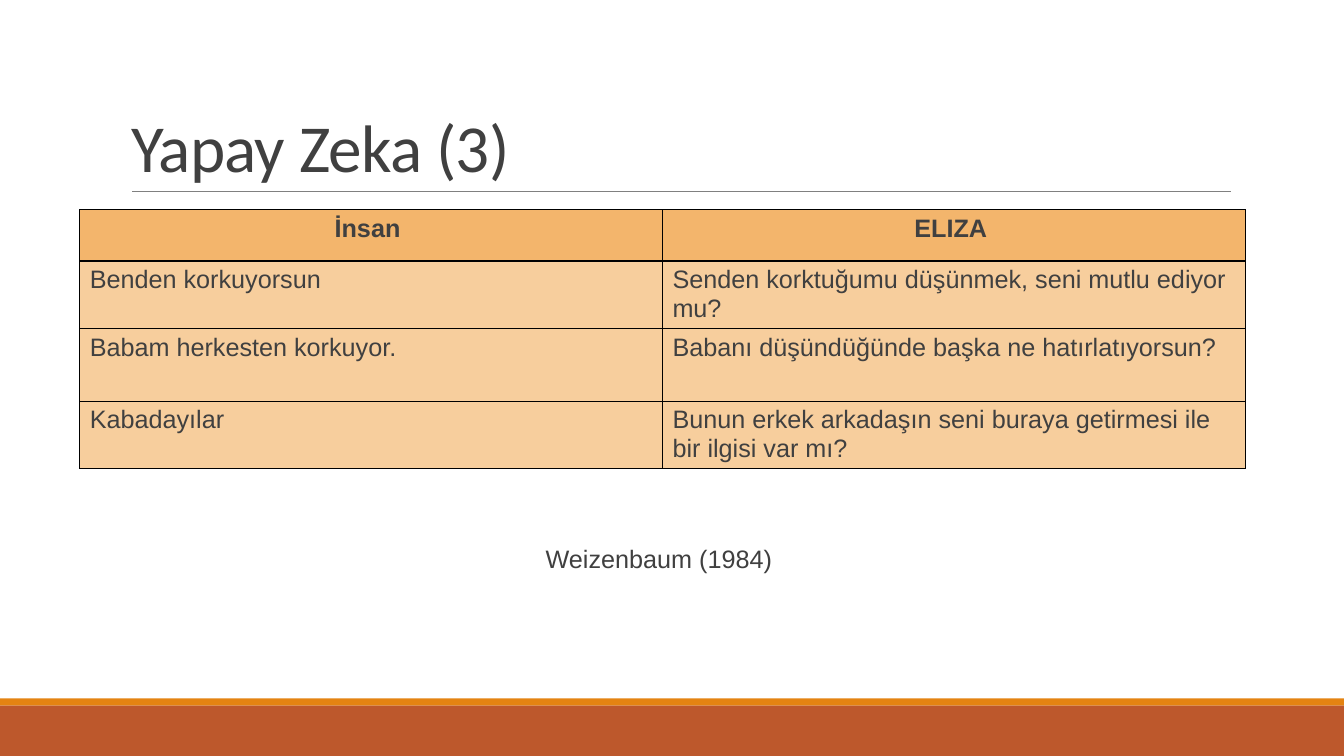
from pptx import Presentation
from pptx.dml.color import RGBColor
from pptx.enum.shapes import MSO_CONNECTOR, MSO_SHAPE
from pptx.enum.text import MSO_ANCHOR, MSO_AUTO_SIZE, PP_ALIGN
from pptx.oxml import parse_xml
from pptx.oxml.ns import nsdecls, qn
from pptx.util import Inches, Pt
from lxml.etree import SubElement

INK = RGBColor(0x40, 0x40, 0x40)
RULE_GREY = RGBColor(0x80, 0x80, 0x80)
RUST = RGBColor(0xBD, 0x58, 0x2C)
ORANGE = RGBColor(0xE4, 0x83, 0x12)
HEADER_FILL = RGBColor(0xF3, 0xB5, 0x6C)
BODY_FILL = RGBColor(0xF7, 0xCE, 0x9D)
BORDER = RGBColor(0, 0, 0)

DIALOGUE = [
    ("İnsan ", "ELIZA "),
    ("Benden korkuyorsun", "Senden korktuğumu düşünmek, seni mutlu ediyor mu?"),
    ("Babam herkesten korkuyor.", "Babanı düşündüğünde başka ne hatırlatıyorsun?"),
    ("Kabadayılar", "Bunun erkek arkadaşın seni buraya getirmesi ile bir ilgisi var mı?"),
]
ROW_HEIGHTS = [0.51, 0.67, 0.72, 0.67]


def format_text(frame, font_name, size, align, bold=False):
    paragraph = frame.paragraphs[0]
    paragraph.alignment = align
    font = paragraph.runs[0].font
    font.name = font_name
    font.size = Pt(size)
    font.bold = bold
    font.color.rgb = INK


def add_footer(slide, left, top, width, height):
    stripe = 0.07
    bands = [(top, stripe, ORANGE), (top + stripe, height - stripe, RUST)]
    for band_top, band_height, color in bands:
        band = slide.shapes.add_shape(
            MSO_SHAPE.RECTANGLE, Inches(left), Inches(band_top), Inches(width), Inches(band_height)
        )
        band.shadow.inherit = False
        band.fill.solid()
        band.fill.fore_color.rgb = color
        band.line.fill.background()


def add_title(slide, left, top, width, height):
    title = slide.shapes.title
    title.left, title.top = Inches(left), Inches(top)
    title.width, title.height = Inches(width), Inches(height)
    frame = title.text_frame
    frame.text = "Yapay Zeka (3)"
    frame.auto_size = MSO_AUTO_SIZE.NONE
    frame.vertical_anchor = MSO_ANCHOR.BOTTOM
    format_text(frame, "Calibri", 48, PP_ALIGN.LEFT)
    heading = frame.paragraphs[0]
    heading.line_spacing = 0.85
    heading.runs[0].font._element.set("spc", "-50")

    baseline = Inches(top + height)
    underline = slide.shapes.add_connector(
        MSO_CONNECTOR.STRAIGHT, Inches(left + 0.11), baseline, Inches(left + width + 0.01), baseline
    )
    underline.line.color.rgb = RULE_GREY
    underline.line.width = Pt(0.5)
    SubElement(underline._element.spPr, qn("a:effectLst"))


def set_borders(cell):
    properties = cell._tc.get_or_add_tcPr()
    for position, side in enumerate(("lnL", "lnR", "lnT", "lnB")):
        border = parse_xml(
            f'<a:{side} {nsdecls("a")} w="{Pt(1)}"><a:solidFill>'
            f'<a:srgbClr val="{BORDER}"/></a:solidFill></a:{side}>'
        )
        properties.insert(position, border)


def add_dialogue(slide, left, top, width):
    table = slide.shapes.add_table(
        len(DIALOGUE), 2, Inches(left), Inches(top), Inches(width), Inches(sum(ROW_HEIGHTS))
    ).table
    for column in table.columns:
        column.width = Inches(width / 2)
    for index, (row, height, lines) in enumerate(zip(table.rows, ROW_HEIGHTS, DIALOGUE)):
        row.height = Inches(height)
        is_header = index == 0
        for cell, line in zip(row.cells, lines):
            cell.text_frame.text = line
            align = PP_ALIGN.CENTER if is_header else PP_ALIGN.LEFT
            format_text(cell.text_frame, "Arial", 18, align, is_header)
            cell.fill.solid()
            cell.fill.fore_color.rgb = HEADER_FILL if is_header else BODY_FILL
            set_borders(cell)


def add_citation(slide, left, top, width, height):
    citation = slide.shapes.add_textbox(Inches(left), Inches(top), Inches(width), Inches(height))
    frame = citation.text_frame
    frame.text = "Weizenbaum (1984) "
    frame.word_wrap = False
    frame.auto_size = MSO_AUTO_SIZE.SHAPE_TO_FIT_TEXT
    format_text(frame, "Arial", 18, PP_ALIGN.CENTER)


def main():
    presentation = Presentation()
    presentation.slide_width = Inches(13.33)
    presentation.slide_height = Inches(7.5)
    slide = presentation.slides.add_slide(presentation.slide_layouts[5])
    add_footer(slide, 0, 6.93, 13.33, 0.57)
    add_title(slide, 1.2, 0.31, 11, 1.59)
    add_dialogue(slide, 0.79, 2.08, 11.56)
    add_citation(slide, 5.3, 5.34, 2.54, 0.4)
    presentation.save("out.pptx")


if __name__ == "__main__":
    main()
